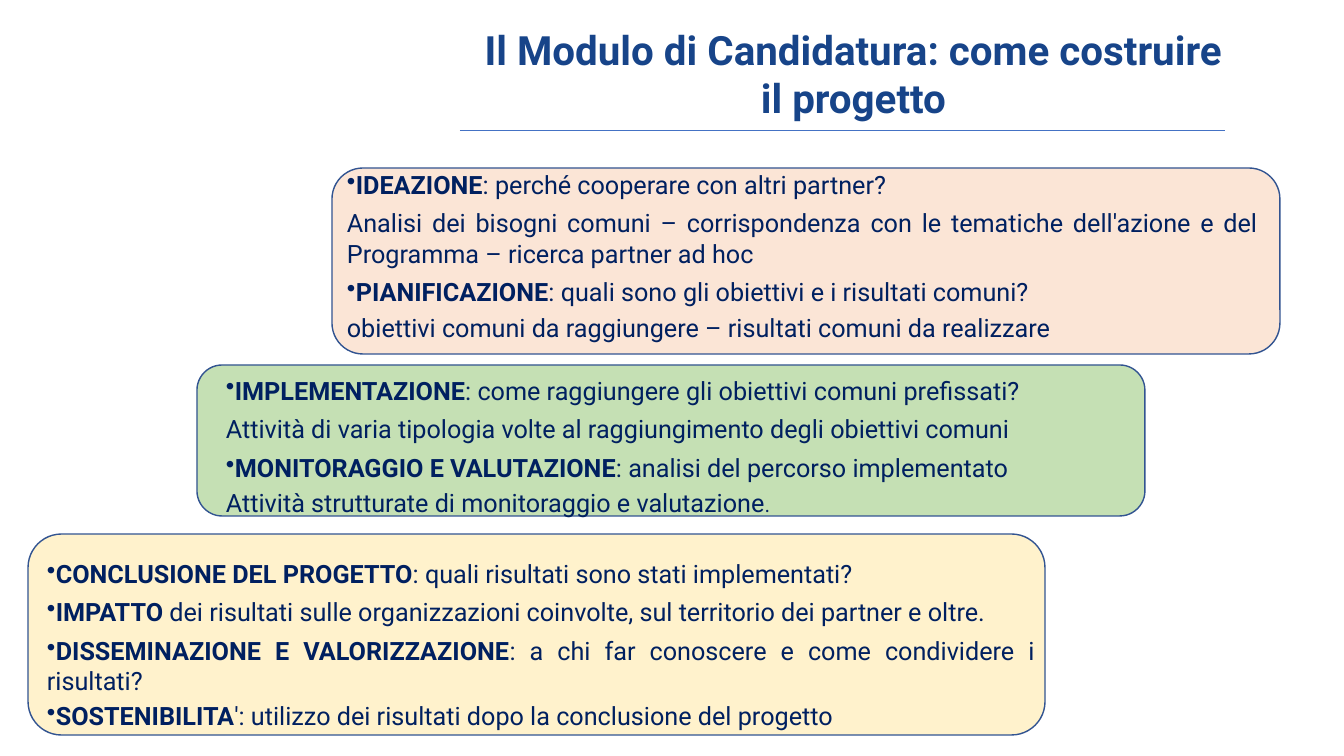
import dataclasses

import pptx
import pptx.dml.color
import pptx.enum.shapes
import pptx.enum.text
import pptx.util
from lxml import etree

SHAPE = pptx.enum.shapes.MSO_SHAPE
ALIGN = pptx.enum.text.PP_ALIGN
ANCHOR = pptx.enum.text.MSO_ANCHOR
SCALE = 914400 / 100.8
NS = "{http://schemas.openxmlformats.org/drawingml/2006/main}"


@dataclasses.dataclass(frozen=True)
class Theme:
    font: str = "Roboto"
    dot_font: str = "Calibri"
    title: str = "174489"
    text: str = "002060"
    rule: str = "4472C4"
    edge: str = "325491"
    peach: str = "FBE5D6"
    cream: str = "FFF2CC"
    green: str = "C5E0B4"
    head_size: float = 28.8
    size: float = 18
    dot_size: float = 14
    gap: float = 6
    last_gap: float = 3.6


def px(n):
    return pptx.util.Emu(round(n * SCALE))


def rgb(code):
    return pptx.dml.color.RGBColor.from_string(code)


class Deck:
    def __init__(self, theme, width, height):
        self.theme = theme
        self.prs = pptx.Presentation()
        self.prs.slide_width, self.prs.slide_height = px(width), px(height)
        self.slide = self.prs.slides.add_slide(self.prs.slide_layouts[6])

    def style(self, para, size, color):
        font = para.font
        font.name = self.theme.font
        font.size = pptx.util.Pt(size)
        font.color.rgb = rgb(color)
        return font

    def title(self, text, box):
        frame = self.slide.shapes.add_textbox(*map(px, box)).text_frame
        frame.word_wrap = True
        frame.vertical_anchor = ANCHOR.MIDDLE
        para = frame.paragraphs[0]
        para.text = text
        para.alignment = ALIGN.CENTER
        self.style(para, self.theme.head_size, self.theme.title).bold = True

    def rule(self, left, right, y):
        line = self.slide.shapes.add_connector(
            pptx.enum.shapes.MSO_CONNECTOR.STRAIGHT, px(left), px(y), px(right), px(y))
        line.line.color.rgb = rgb(self.theme.rule)
        line.line.width = pptx.util.Pt(0.5)
        etree.SubElement(line.element.spPr, NS + "effectLst")

    def card(self, fill, box, area, rows):
        """Group a rounded panel with its text; rows are (bold lead, rest, end dot)."""
        group = self.slide.shapes.add_group_shape().shapes
        panel = group.add_shape(SHAPE.ROUNDED_RECTANGLE, *map(px, box))
        panel.shadow.inherit = False
        panel.fill.solid()
        panel.fill.fore_color.rgb = rgb(fill)
        panel.line.color.rgb = rgb(self.theme.edge)
        panel.line.width = pptx.util.Pt(1)

        frame = group.add_textbox(*map(px, area)).text_frame
        frame.word_wrap = True
        for i, row in enumerate(rows):
            para = frame.add_paragraph() if i else frame.paragraphs[0]
            self.row(para, *row)
            if i:
                last = i == len(rows) - 1
                para.space_before = pptx.util.Pt(
                    self.theme.last_gap if last else self.theme.gap)

    def row(self, para, lead, rest, dot=""):
        para.alignment = ALIGN.JUSTIFY
        if lead:
            props = para._p.get_or_add_pPr()
            props.set("marL", "0")
            props.set("indent", "0")
            etree.SubElement(props, NS + "buChar", char="•")
            run = para.add_run()
            run.text = lead
            run.font.bold = True
        para.add_run().text = rest
        if dot:
            run = para.add_run()
            run.text = dot
            run.font.name = self.theme.dot_font
            run.font.size = pptx.util.Pt(self.theme.dot_size)
        self.style(para, self.theme.size, self.theme.text)


def main():
    theme = Theme()
    deck = Deck(theme, 1344, 756)
    deck.title("Il Modulo di Candidatura: come costruire il progetto", (460, 25, 787, 97))
    deck.rule(460, 1225, 130)
    deck.card(theme.peach, (332, 168, 948, 186), (337, 164, 931, 181), [
        ("IDEAZIONE", ": perché cooperare con altri partner?"),
        ("", "Analisi dei bisogni comuni – corrispondenza con le tematiche "
             "dell'azione e del Programma – ricerca partner ad hoc"),
        ("PIANIFICAZIONE", ": quali sono gli obiettivi e i risultati comuni?"),
        ("", "obiettivi comuni da raggiungere – risultati comuni da realizzare"),
    ])
    deck.card(theme.cream, (28, 534, 1017, 201), (37, 553, 1008, 181), [
        ("CONCLUSIONE DEL PROGETTO", ": quali risultati sono stati implementati?"),
        ("IMPATTO", " dei risultati sulle organizzazioni coinvolte, "
                    "sul territorio dei partner e oltre."),
        ("DISSEMINAZIONE E VALORIZZAZIONE",
         ": a chi far conoscere e come condividere i risultati?"),
        ("SOSTENIBILITA", "': utilizzo dei risultati dopo la conclusione del progetto"),
    ])
    deck.card(theme.green, (197, 365, 948, 151), (216, 370, 852, 150), [
        ("IMPLEMENTAZIONE", ": come raggiungere gli obiettivi comuni prefissati?"),
        ("", "Attività di varia tipologia volte al raggiungimento degli obiettivi comuni"),
        ("MONITORAGGIO E VALUTAZIONE", ": analisi del percorso implementato"),
        ("", "Attività strutturate di monitoraggio e valutazione", "."),
    ])
    deck.prs.save("out.pptx")


if __name__ == "__main__":
    main()
